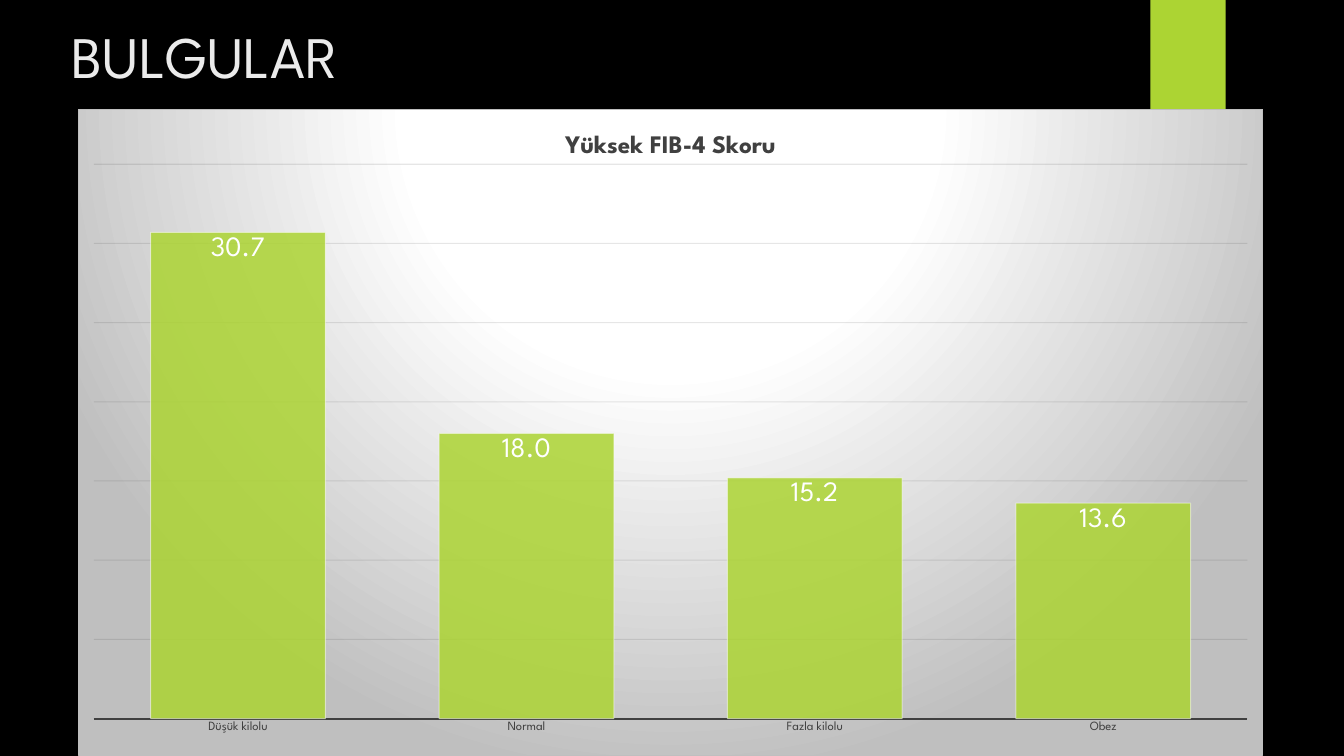
from lxml import etree
from pptx import Presentation
from pptx.chart.data import CategoryChartData
from pptx.dml.color import RGBColor
from pptx.enum.chart import XL_CHART_TYPE, XL_LABEL_POSITION, XL_TICK_LABEL_POSITION, XL_TICK_MARK
from pptx.enum.shapes import MSO_SHAPE
from pptx.enum.text import MSO_ANCHOR
from pptx.oxml import parse_xml
from pptx.oxml.ns import nsdecls, qn
from pptx.util import Inches, Pt

COLUMNS = XL_CHART_TYPE.COLUMN_CLUSTERED
INSIDE_END = XL_LABEL_POSITION.INSIDE_END
NO_LABELS = XL_TICK_LABEL_POSITION.NONE
NO_TICKS = XL_TICK_MARK.NONE
RECTANGLE = MSO_SHAPE.RECTANGLE
TOP = MSO_ANCHOR.TOP

BLACK = RGBColor(0x00, 0x00, 0x00)
WHITE = RGBColor(0xFF, 0xFF, 0xFF)
HEADING = RGBColor(0xEB, 0xEB, 0xEB)
GREEN = RGBColor(0xAC, 0xD4, 0x33)
DARK_GREY = RGBColor(0x40, 0x40, 0x40)
GRID = RGBColor(0x0D, 0x0D, 0x0D)
SILVER = RGBColor(0xBF, 0xBF, 0xBF)

FONT = "League Spartan"
WIDTH, HEIGHT = Inches(13.33), Inches(7.5)
SCORES = {"Düşük kilolu": 30.7, "Normal": 18.0, "Fazla kilolu": 15.2, "Obez": 13.6}
PLOT_AREA = {"x": 0.013, "y": 0.085, "w": 0.974, "h": 0.858}


def box(left, top, width, height):
    """Turn shares of the slide's size into a position and a size."""
    return (round(WIDTH * left), round(HEIGHT * top),
            round(WIDTH * width), round(HEIGHT * height))


def style_font(font, size, color, bold=False):
    font.name = FONT
    font.size = Pt(size)
    font.bold = bold
    font.color.rgb = color


def style_line(line, color, width, opacity=100):
    line.color.rgb = color
    line.width = Pt(width)
    set_opacity(line.fill, opacity)


def set_opacity(fill, percent):
    if percent < 100:
        color = fill._xPr.find(qn("a:solidFill"))[0]
        etree.SubElement(color, qn("a:alpha")).set("val", str(percent * 1000))


def add_heading(slide, text):
    heading = slide.shapes.add_textbox(*box(0.046, 0.02, 0.77, 0.2))
    frame = heading.text_frame
    frame.word_wrap = True
    frame.vertical_anchor = TOP
    frame.text = text
    style_font(frame.paragraphs[0].runs[0].font, 42, HEADING)


def add_ribbon(slide):
    ribbon = slide.shapes.add_shape(RECTANGLE, *box(0.856, 0, 0.056, 0.167))
    ribbon.shadow.inherit = False
    ribbon.fill.solid()
    ribbon.fill.fore_color.rgb = GREEN
    ribbon.line.fill.background()


def fill_chart_background(chart):
    """Give the chart area a radial gradient centred above the middle."""
    stops = "".join(
        f'<a:gs pos="{share * 1000}"><a:srgbClr val="{color}"/></a:gs>'
        for share, color in ((0, WHITE), (39, WHITE), (100, SILVER)))
    properties = parse_xml(
        f'<c:spPr {nsdecls("c", "a")}><a:gradFill><a:gsLst>{stops}</a:gsLst>'
        '<a:path path="circle">'
        '<a:fillToRect l="50000" t="-80000" r="50000" b="180000"/></a:path></a:gradFill>'
        f'<a:ln w="9525"><a:solidFill><a:srgbClr val="{SILVER}"/></a:solidFill></a:ln>'
        '</c:spPr>')
    chart._chartSpace.find(qn("c:chart")).addnext(properties)


def place_plot_area(chart):
    plot_area = chart._chartSpace.find(qn("c:chart")).find(qn("c:plotArea"))
    for old_layout in plot_area.findall(qn("c:layout")):
        plot_area.remove(old_layout)
    shares = "".join(f'<c:{key} val="{share}"/>' for key, share in PLOT_AREA.items())
    plot_area.insert(0, parse_xml(
        f'<c:layout {nsdecls("c")}><c:manualLayout><c:layoutTarget val="inner"/>'
        f'<c:xMode val="edge"/><c:yMode val="edge"/>{shares}</c:manualLayout></c:layout>'))


def style_axes(chart):
    groups = chart.category_axis
    groups.major_tick_mark = NO_TICKS
    style_font(groups.tick_labels.font, 9, DARK_GREY)
    style_line(groups.format.line, DARK_GREY, 1.5)

    scale = chart.value_axis
    scale.minimum_scale, scale.maximum_scale, scale.major_unit = 0, 35, 5
    scale.tick_label_position = NO_LABELS
    scale.major_tick_mark = NO_TICKS
    scale.visible = False
    style_line(scale.major_gridlines.format.line, GRID, 0.75, opacity=10)


def style_columns(plot):
    plot.gap_width = 65
    plot.vary_by_categories = False
    columns = plot.series[0].format
    columns.fill.solid()
    columns.fill.fore_color.rgb = GREEN
    set_opacity(columns.fill, 85)
    style_line(columns.line, WHITE, 0.75, opacity=50)

    plot.has_data_labels = True
    labels = plot.data_labels
    labels.show_value = True
    labels.position = INSIDE_END
    labels.number_format = "0.0"
    labels.number_format_is_linked = False
    style_font(labels.font, 20, WHITE)


def add_score_chart(slide, title):
    data = CategoryChartData()
    data.categories = list(SCORES)
    data.add_series("Series 1", list(SCORES.values()))
    chart = slide.shapes.add_chart(COLUMNS, *box(0.058, 0.144, 0.882, 0.856), data).chart
    style_font(chart.font, 10, WHITE)
    chart.has_legend = False
    chart.has_title = True
    chart.chart_title.text_frame.text = title
    style_font(chart.chart_title.text_frame.paragraphs[0].runs[0].font, 18, DARK_GREY, bold=True)
    chart.chart_title.include_in_layout = False
    style_axes(chart)
    style_columns(chart.plots[0])
    place_plot_area(chart)
    fill_chart_background(chart)


def main():
    deck = Presentation()
    deck.slide_width, deck.slide_height = WIDTH, HEIGHT
    slide = deck.slides.add_slide(deck.slide_layouts[6])
    slide.background.fill.solid()
    slide.background.fill.fore_color.rgb = BLACK
    add_ribbon(slide)
    add_heading(slide, "BULGULAR")
    add_score_chart(slide, "Yüksek FIB-4 Skoru")
    deck.save("out.pptx")


if __name__ == "__main__":
    main()
